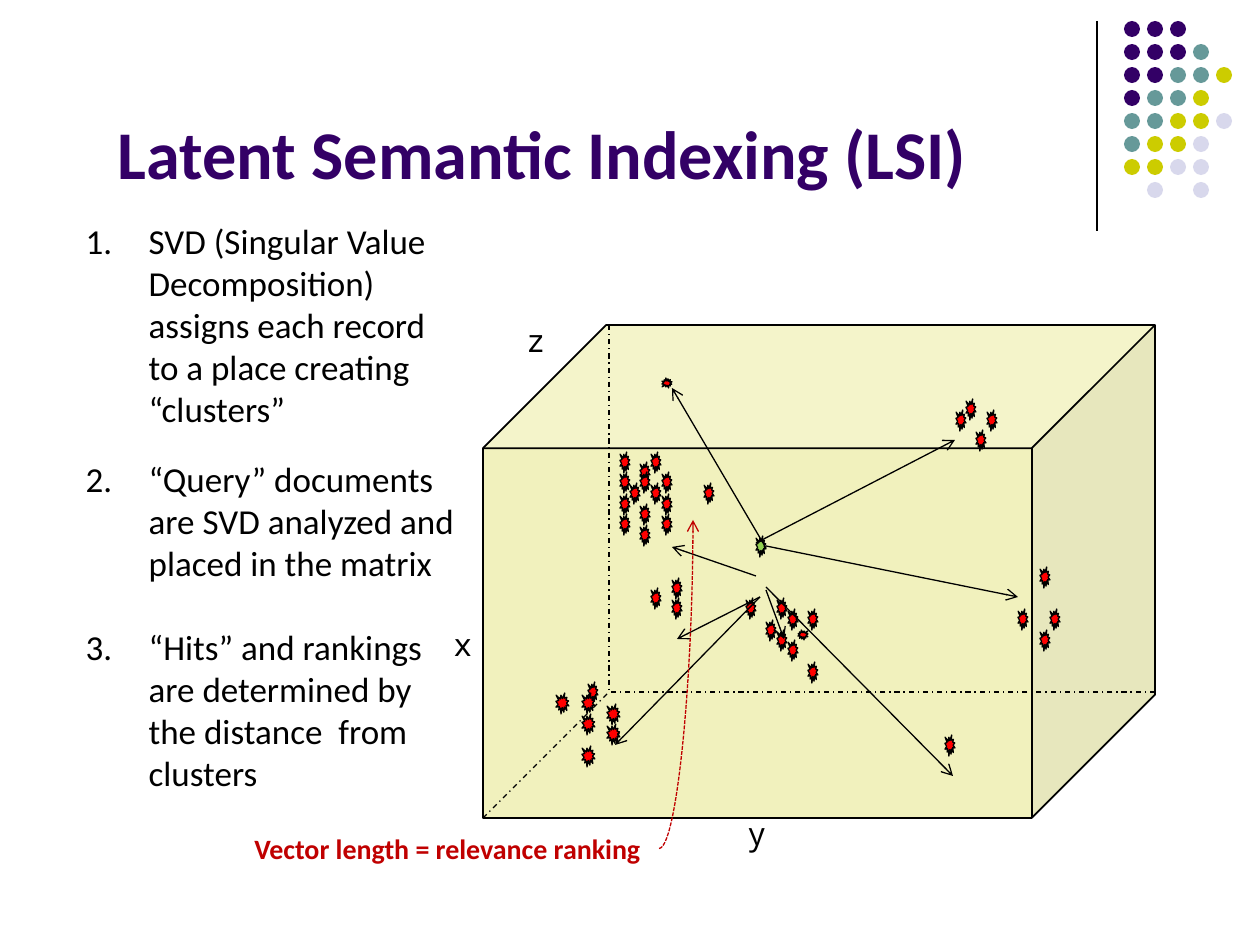
from dataclasses import dataclass

from lxml.etree import SubElement
from pptx import Presentation
from pptx.dml.color import RGBColor
from pptx.enum.dml import MSO_LINE_DASH_STYLE as Dash
from pptx.enum.shapes import MSO_AUTO_SHAPE_TYPE as Shape, MSO_CONNECTOR as Connector
from pptx.enum.text import MSO_ANCHOR as Anchor, MSO_AUTO_SIZE as AutoSize, PP_ALIGN as Align
from pptx.oxml.ns import qn
from pptx.util import Emu, Pt


@dataclass(frozen=True)
class Theme:
    purple: RGBColor = RGBColor.from_string("330066")
    teal: RGBColor = RGBColor.from_string("669999")
    olive: RGBColor = RGBColor.from_string("CCCC00")
    lilac: RGBColor = RGBColor.from_string("D8D8EC")
    black: RGBColor = RGBColor.from_string("000000")
    red: RGBColor = RGBColor.from_string("FF0000")
    green: RGBColor = RGBColor.from_string("92D050")
    dark_red: RGBColor = RGBColor.from_string("C00000")
    text_font: str = "Calibri"
    axis_font: str = "Noto Sans Mono"
    title_size: Pt = Pt(39)
    list_size: Pt = Pt(20)
    axis_size: Pt = Pt(18)
    note_size: Pt = Pt(16)
    thin: Pt = Pt(0.75)
    edge: Pt = Pt(1)


theme = Theme()
SCALE = 914400 / 126  # EMU in one px


def px(*lengths):
    return [Emu(round(length * SCALE)) for length in lengths]


def add_line(page, ends, color, dash=None, arrow=False, kind=Connector.STRAIGHT):
    line = page.shapes.add_connector(kind, *px(*ends))
    line.line.color.rgb = color
    line.line.width = theme.thin
    if dash:
        line.line.dash_style = dash
    properties = line.element.spPr
    if arrow:
        SubElement(properties.find(qn("a:ln")), qn("a:tailEnd"), type="arrow")
    SubElement(properties, qn("a:effectLst"))
    return line


deck = Presentation()
deck.slide_width, deck.slide_height = px(1260, 945)
page = deck.slides.add_slide(deck.slide_layouts[1])
title, body = page.placeholders

# Corner ornament: a rule and a grid of dots
add_line(page, (1097, 21, 1097, 231), theme.black)
dot_colors = {"P": theme.purple, "T": theme.teal, "O": theme.olive, "L": theme.lilac}
dot_rows = ["PPP", "PPPT", "PPTTO", "PTTO", "TTOOL", "TOOL", "OOLL", ".L.L"]
DOT, DOT_STEP = 16, 23
for row, codes in enumerate(dot_rows):
    for column, code in enumerate(codes):
        if code in dot_colors:
            dot = page.shapes.add_shape(
                Shape.OVAL, *px(1124 + column * DOT_STEP, 21 + row * DOT_STEP, DOT, DOT))
            dot.shadow.inherit = False
            dot.fill.solid()
            dot.fill.fore_color.rgb = dot_colors[code]
            dot.line.fill.background()

# Title
title.left, title.top, title.width, title.height = px(105, 111, 1134, 88)
title.text = "Latent Semantic Indexing (LSI)"
title.text_frame.vertical_anchor = Anchor.BOTTOM
title.text_frame.auto_size = AutoSize.NONE
title.text_frame.paragraphs[0].alignment = Align.LEFT
title_format = {"name": theme.text_font, "size": theme.title_size, "bold": True}
title_font = title.text_frame.paragraphs[0].runs[0].font
for key, value in title_format.items():
    setattr(title_font, key, value)
title_font.color.rgb = theme.purple

# Numbered list
steps = [
    ("SVD (Singular Value Decomposition) assigns each record to a place creating “clusters”", 0),
    ("“Query” documents are SVD analyzed and placed in the matrix", 16),
    ("“Hits” and rankings are determined by the distance  from clusters", 24),
]
body.left, body.top, body.width, body.height = px(73, 213, 399, 590)
body.text_frame.auto_size = AutoSize.NONE
body.text_frame.text = "\n".join(text for text, gap in steps)
list_format = {"name": theme.text_font, "size": theme.list_size}
for para, (text, gap) in zip(body.text_frame.paragraphs, steps):
    para.space_before = Pt(gap)
    settings = para._p.get_or_add_pPr()
    indent = px(63)[0]
    settings.set("marL", str(indent))
    settings.set("indent", str(-indent))
    SubElement(settings, qn("a:buFontTx"))
    SubElement(settings, qn("a:buAutoNum"), type="arabicPeriod")
    list_font = para.runs[0].font
    for key, value in list_format.items():
        setattr(list_font, key, value)
    list_font.color.rgb = theme.black

# Cube with its hidden edges
cube = page.shapes.add_shape(Shape.CUBE, *px(483, 325, 672, 493))
cube.shadow.inherit = False
cube.fill.solid()
cube.fill.fore_color.rgb = theme.olive
cube_color = cube.element.spPr.find(qn("a:solidFill"))[0]
SubElement(cube_color, qn("a:alpha"), val="26000")
cube.line.color.rgb = theme.black
cube.line.width = theme.edge
for corner in [(483, 818), (609, 325), (1155, 692)]:
    add_line(page, (*corner, 609, 692), theme.black, Dash.DASH_DOT)

# Axis letters and the note on vector length
axis_format = {"name": theme.axis_font, "size": theme.axis_size}
note_format = {"name": theme.text_font, "size": theme.note_size, "bold": True}
labels = [
    ("x", (441, 619, 43, 64), axis_format, theme.black),
    ("y", (735, 808, 43, 64), axis_format, theme.black),
    ("z", (514, 315, 44, 64), axis_format, theme.black),
    ("Vector length = relevance ranking", (242, 825, 417, 47), note_format, theme.dark_red),
]
for text, place, text_format, color in labels:
    box = page.shapes.add_textbox(*px(*place))
    box.text_frame.word_wrap = False
    box.text_frame.auto_size = AutoSize.SHAPE_TO_FIT_TEXT
    span = box.text_frame.paragraphs[0].add_run()
    span.text = text
    for key, value in text_format.items():
        setattr(span.font, key, value)
    span.font.color.rgb = color
note = box

# Documents: column and row on a grid of twelfths of an inch
CELL = 126 / 12
clusters = [  # positions, width, height, flip, colour
    ([(59, 43), (59, 45), (59, 47), (59, 49), (60, 46), (61, 44), (61, 45), (61, 48),
      (61, 50), (62, 43), (62, 46), (63, 45), (63, 47), (63, 49), (67, 46)],
     1, 2, None, theme.red),
    ([(63, 36)], 1, 1, "flipV", theme.red),
    ([(99, 54), (97, 58), (99, 60), (100, 58)], 1, 2, None, theme.red),
    ([(92, 38), (91, 39), (93, 41), (94, 39)], 1, 2, None, theme.red),
    ([(56, 65), (90, 70)], 1, 2, None, theme.red),
    ([(53, 66), (55.4, 68), (57.8, 69), (55.4, 66), (55.4, 71), (57.8, 67)],
     1.2, 2, None, theme.red),
    ([(62, 56), (64, 57), (64, 55)], 1, 2, None, theme.red),
    ([(77, 58), (74, 60), (75, 58), (74, 57), (71, 57), (73, 59), (75, 61), (77, 63)],
     1, 2, None, theme.red),
    ([(76, 60)], 1, 1, "flipH", theme.red),
    ([(72, 51)], 1, 2, None, theme.green),
]
for positions, width, height, flip, color in clusters:
    for column, row in positions:
        cells = (column, row, width, height)
        document = page.shapes.add_shape(
            Shape.EXPLOSION1, *px(*(round(cell * CELL) for cell in cells)))
        document.shadow.inherit = False
        document.fill.solid()
        document.fill.fore_color.rgb = color
        document.line.color.rgb = theme.black
        document.line.width = theme.thin
        if flip:
            document.element.spPr.xfrm.set(flip, "1")

# Vectors from the query to the clusters
vectors = [
    (756, 576, 672, 547), (766, 590, 784, 639), (760, 597, 677, 639), (760, 597, 615, 745),
    (756, 543, 955, 440), (766, 548, 672, 388), (766, 546, 1018, 597), (766, 587, 953, 776),
]
for ends in vectors:
    add_line(page, ends, theme.black, arrow=True)

# Curved pointer from the note
pointer = add_line(page, (659, 848, 693, 520), theme.dark_red, Dash.SQUARE_DOT, True, Connector.CURVE)
pointer.element.spPr.find(qn("a:prstGeom")).set("prst", "curvedConnector2")
pointer.begin_connect(note, 3)

deck.save("out.pptx")
